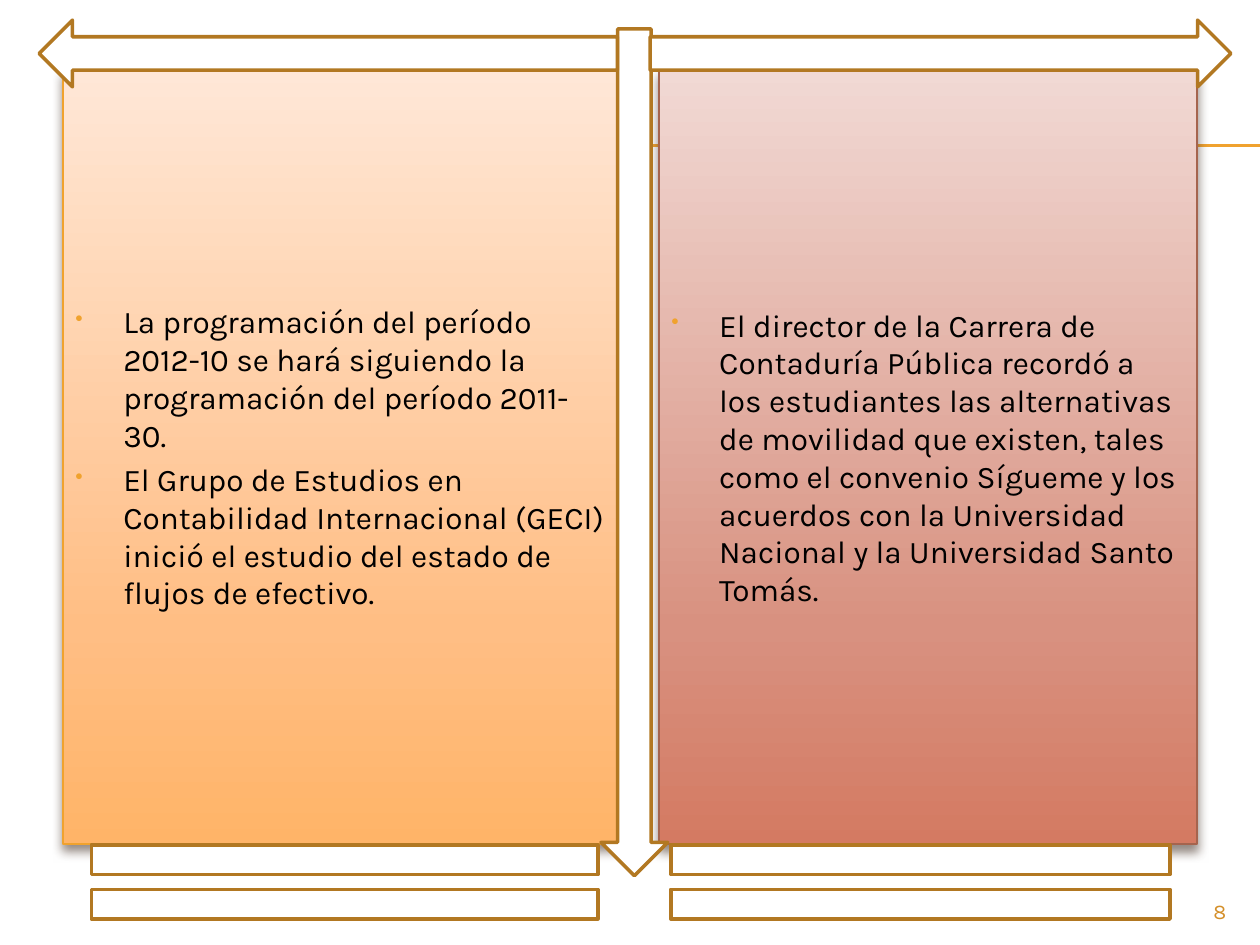
from copy import deepcopy

from lxml.etree import SubElement
from pptx import Presentation
from pptx.dml.color import RGBColor
from pptx.enum.shapes import MSO_CONNECTOR as Connector, MSO_SHAPE as Shape
from pptx.enum.text import MSO_ANCHOR as Anchor, PP_ALIGN as Align
from pptx.oxml.ns import qn
from pptx.util import Inches, Pt

FONT = "Karla"
BLACK = RGBColor(0x00, 0x00, 0x00)
WHITE = RGBColor(0xFF, 0xFF, 0xFF)
AMBER = RGBColor(0xF0, 0xA2, 0x2E)
BRONZE = RGBColor(0xB2, 0x78, 0x22)
RUST = RGBColor(0xA5, 0x64, 0x4E)
GOLD = RGBColor(0xD4, 0x8F, 0x29)
SHADOW = RGBColor(0x4E, 0x3B, 0x30)
ORANGE_GRADIENT = (
    RGBColor(0xFF, 0xE7, 0xD7), RGBColor(0xFF, 0xBE, 0x84), RGBColor(0xFF, 0xB4, 0x68))
RED_GRADIENT = (
    RGBColor(0xF1, 0xD9, 0xD4), RGBColor(0xD8, 0x91, 0x80), RGBColor(0xD4, 0x7A, 0x62))
GRADIENT_POSITIONS = (0, 0.72, 1)

LEFT_ITEMS = (
    "La programación del período 2012-10 se hará siguiendo la programación del período 2011-30.",
    "El Grupo de Estudios en Contabilidad Internacional (GECI) inició el estudio del estado "
    "de flujos de efectivo.",
)
RIGHT_ITEMS = (
    "El director de la Carrera de Contaduría Pública recordó a los estudiantes las alternativas "
    "de movilidad que existen, tales como el convenio Sígueme y los acuerdos con la Universidad "
    "Nacional y la Universidad Santo Tomás.",
)


def add_rule(slide, top):
    rule = slide.shapes.add_connector(
        Connector.STRAIGHT, Inches(0.56), Inches(top), Inches(10), Inches(top))
    rule.line.color.rgb = AMBER
    rule.line.width = Pt(0.75)
    SubElement(rule._element.spPr, qn("a:effectLst"))


def add_outlined_shape(slide, kind, left, top, width, height, color=BRONZE, weight=2):
    shape = slide.shapes.add_shape(
        kind, Inches(left), Inches(top), Inches(width), Inches(height))
    shape.shadow.inherit = False
    shape.fill.solid()
    shape.fill.fore_color.rgb = WHITE
    shape.line.color.rgb = color
    shape.line.width = Pt(weight)
    return shape


def set_gradient(shape, colors):
    shape.fill.gradient()
    shape.fill.gradient_angle = 270
    stop_list = shape._element.spPr.find(qn("a:gradFill")).find(qn("a:gsLst"))
    stop_list.append(deepcopy(stop_list[-1]))
    for stop, color, position in zip(shape.fill.gradient_stops, colors, GRADIENT_POSITIONS):
        stop.color.rgb = color
        stop.position = position


def add_shadow(shape):
    effects = shape._element.spPr.find(qn("a:effectLst"))
    shadow = SubElement(
        effects, qn("a:outerShdw"), blurRad=str(Pt(6)), dist=str(Pt(4)),
        dir="5400000", algn="ctr", rotWithShape="0")
    color = SubElement(shadow, qn("a:srgbClr"), val=str(SHADOW))
    SubElement(color, qn("a:alpha"), val="60000")


def add_bullet(paragraph):
    properties = paragraph._p.get_or_add_pPr()
    indent = Inches(0.38)
    properties.set("marL", str(indent))
    properties.set("indent", str(-indent))
    bullet_color = SubElement(properties, qn("a:buClr"))
    SubElement(bullet_color, qn("a:srgbClr"), val=str(AMBER))
    SubElement(properties, qn("a:buSzPct"), val="70000")
    SubElement(properties, qn("a:buChar"), char="•")


def set_font(paragraph, size, color):
    paragraph.font.name = FONT
    paragraph.font.size = Pt(size)
    paragraph.font.color.rgb = color


def add_panel(slide, left, width, colors, line_color, items):
    panel = add_outlined_shape(
        slide, Shape.RECTANGLE, left, 0.55, width, 6.15, line_color, 0.79)
    set_gradient(panel, colors)
    add_shadow(panel)
    frame = panel.text_frame
    frame.word_wrap = True
    frame.vertical_anchor = Anchor.MIDDLE
    for index, item in enumerate(items):
        paragraph = frame.add_paragraph() if index else frame.paragraphs[0]
        paragraph.text = item
        paragraph.alignment = Align.LEFT
        add_bullet(paragraph)
        set_font(paragraph, 18, BLACK)
        if index:
            paragraph.space_before = Pt(3.6)


def add_page_number(slide, number):
    box = slide.shapes.add_textbox(Inches(9), Inches(7.08), Inches(0.83), Inches(0.27))
    box.text_frame.word_wrap = True
    paragraph = box.text_frame.paragraphs[0]
    paragraph.text = number
    paragraph.alignment = Align.RIGHT
    set_font(paragraph, 12, GOLD)


def main():
    presentation = Presentation()
    presentation.slide_width = Inches(10)
    presentation.slide_height = Inches(7.5)
    slide = presentation.slides.add_slide(presentation.slide_layouts[6])

    for top in (1.15, 1.16):
        add_rule(slide, top)
    add_panel(slide, 0.5, 4.42, ORANGE_GRADIENT, AMBER, LEFT_ITEMS)
    add_panel(slide, 5.23, 4.27, RED_GRADIENT, RUST, RIGHT_ITEMS)
    for kind, left, top, width, height in (
        (Shape.DOWN_ARROW, 4.77, 0.23, 0.53, 6.72),
        (Shape.RIGHT_ARROW, 5.16, 0.16, 4.61, 0.53),
        (Shape.LEFT_ARROW, 0.31, 0.16, 4.59, 0.53),
        (Shape.MATH_EQUAL, 0, 6.5, 5.47, 1),
        (Shape.MATH_EQUAL, 4.61, 6.5, 5.39, 1),
    ):
        add_outlined_shape(slide, kind, left, top, width, height)
    add_page_number(slide, "8")

    presentation.save("out.pptx")


if __name__ == "__main__":
    main()
